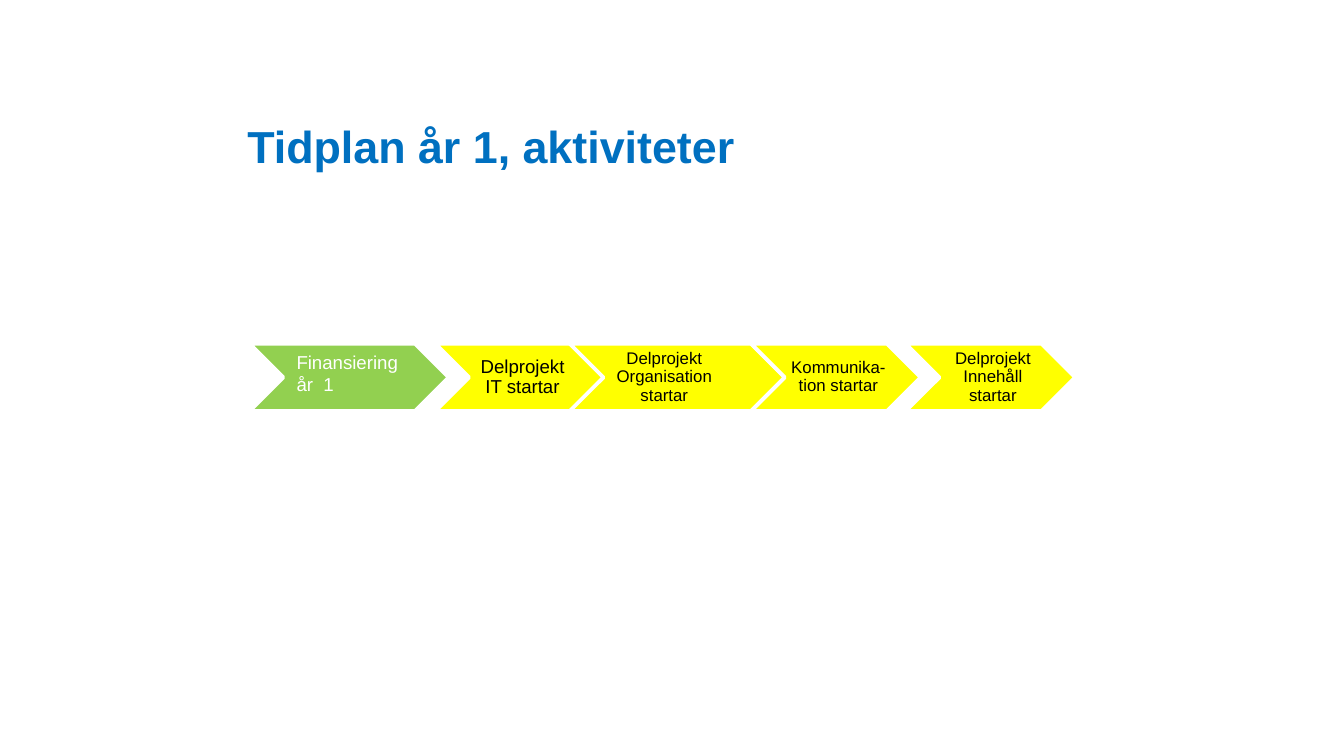
"""Build the year 1 timeline slide with a row of activity chevrons."""
from pptx import Presentation
from pptx.dml.color import RGBColor as Rgb
from pptx.enum.shapes import MSO_SHAPE as Kind
from pptx.enum.text import MSO_ANCHOR as Anchor, PP_ALIGN as Align
from pptx.util import Cm, Pt

TITLE = "Tidplan år 1, aktiviteter"
START = ("Finansiering år  1", 4.72, 3.76)
# text, left, width, label inset, label width, size
STEPS = [
    ("Delprojekt IT startar", 8.23, 3.2, 0.64, 1.94, 10),
    ("Delprojekt Organisation startar", 10.77, 4.06, 0.71, 2.08, 9),
    ("Kommunika-tion startar", 14.2, 3.2, 0.64, 1.94, 9),
    ("Delprojekt Innehåll startar", 17.12, 3.2, 0.64, 1.94, 9),
]
COLORS = {"title": "0070C0", "start": "92D050", "step": "FFFF00",
          "light": "FFFFFF", "dark": "000000"}
TOP, HIGH = 6.5, 1.27


def color(name):
    return Rgb.from_string(COLORS[name])


def write(frame, text, size, ink, align, bold=False):
    frame.word_wrap = True
    frame.text = text
    para = frame.paragraphs[0]
    para.alignment = align
    font = para.runs[0].font
    font.name, font.size, font.bold = "Arial", Pt(size), bold
    font.color.rgb = color(ink)
    return para


def chevron(shapes, left, width, fill):
    shape = shapes.add_shape(Kind.CHEVRON, Cm(left), Cm(TOP), Cm(width), Cm(HIGH))
    shape.shadow.inherit = False
    shape.fill.solid()
    shape.fill.fore_color.rgb = color(fill)
    shape.line.color.rgb = color("light")
    shape.line.width = Pt(2)
    return shape


def label(shapes, text, left, width, size):
    frame = shapes.add_textbox(Cm(left), Cm(TOP), Cm(width), Cm(HIGH)).text_frame
    frame.margin_left = Cm(0.1)
    frame.margin_right = frame.margin_top = frame.margin_bottom = Cm(0.03)
    frame.vertical_anchor = Anchor.MIDDLE
    write(frame, text, size, "dark", Align.CENTER).line_spacing = 0.9


def main():
    deck = Presentation()
    deck.slide_width, deck.slide_height = Cm(25.4), Cm(14.29)
    slide = deck.slides.add_slide(deck.slide_layouts[5])

    title = slide.shapes.title
    title.left, title.top = Cm(4.42), Cm(1.07)
    title.width, title.height = Cm(16.61), Cm(2.31)
    title.text_frame.vertical_anchor = Anchor.BOTTOM
    write(title.text_frame, TITLE, 24, "title", Align.LEFT, True)

    text, left, width = START
    frame = chevron(slide.shapes, left, width, "start").text_frame
    frame.vertical_anchor = Anchor.TOP
    write(frame, text, 10, "light", Align.LEFT)

    for text, left, width, inset, room, size in STEPS:
        group = slide.shapes.add_group_shape()
        chevron(group.shapes, left, width, "step")
        label(group.shapes, text, left + inset, room, size)

    deck.save("out.pptx")


if __name__ == "__main__":
    main()
